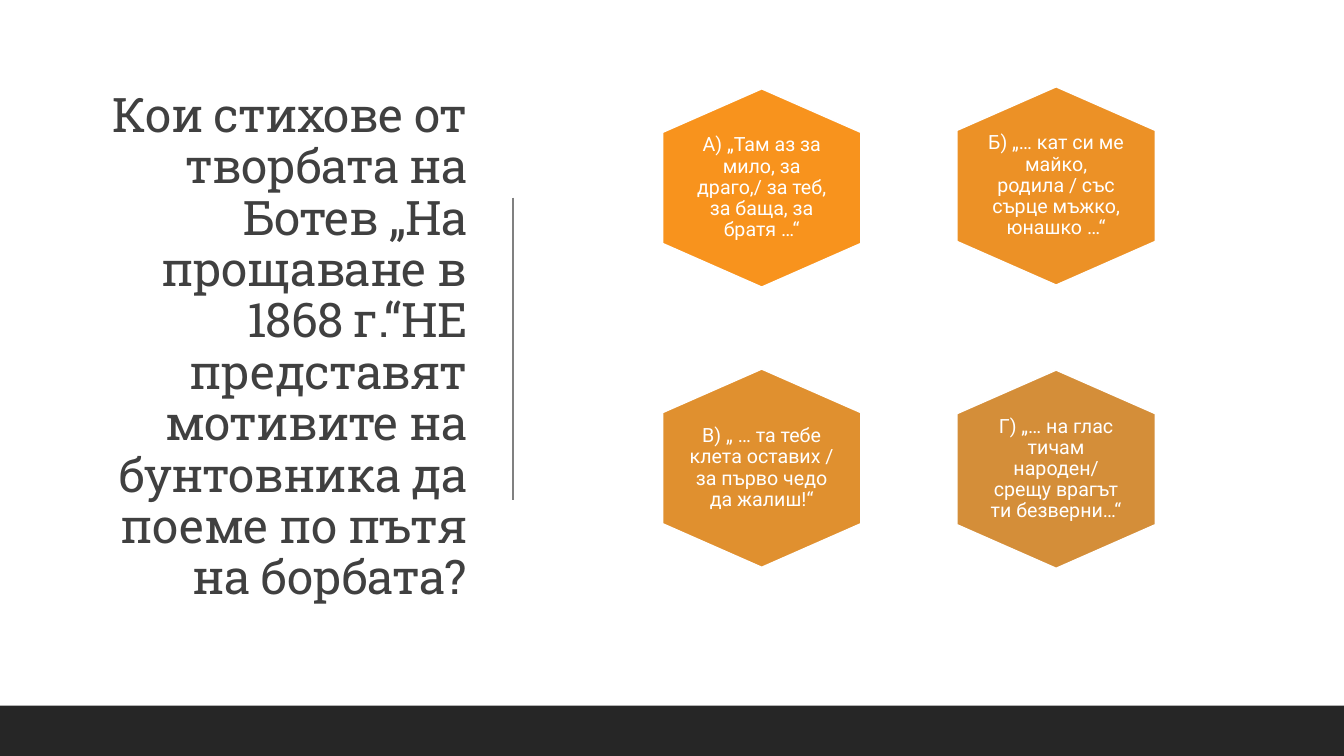
"""Build a quiz slide with a question and four hexagonal answers."""
from dataclasses import dataclass

from pptx import Presentation
from pptx.dml.color import RGBColor
from pptx.enum.shapes import MSO_CONNECTOR, MSO_SHAPE
from pptx.enum.text import MSO_ANCHOR, PP_ALIGN
from pptx.oxml.ns import qn
from pptx.shapes.autoshape import Shape
from pptx.slide import Slide
from pptx.util import Inches, Pt
from lxml import etree

STRAIGHT = MSO_CONNECTOR.STRAIGHT
RECTANGLE = MSO_SHAPE.RECTANGLE
MIDDLE = MSO_ANCHOR.MIDDLE
CENTER, RIGHT = PP_ALIGN.CENTER, PP_ALIGN.RIGHT

WHITE = RGBColor(0xFF, 0xFF, 0xFF)
DARK = RGBColor(0x26, 0x26, 0x26)
TEXT = RGBColor(0x40, 0x40, 0x40)
GREY = RGBColor(0x80, 0x80, 0x80)

QUESTION = ("Кои стихове от творбата на Ботев „На прощаване в 1868 г.“НЕ "
            "представят мотивите на бунтовника да поеме по пътя на борбата?")
HEX_SIZE = 1.97
HEX_POINTS = ((0.5, 0), (1, 0.22), (1, 0.78), (0.5, 1), (0, 0.78), (0, 0.22))
LEFT_COLUMN, RIGHT_COLUMN = 6.57, 9.49


@dataclass(frozen=True)
class Answer:
    left: float
    top: float
    fill: RGBColor
    text: str


ANSWERS = (
    Answer(LEFT_COLUMN, 0.88, RGBColor(0xF8, 0x93, 0x1D),
           "А) „Там аз за мило, за драго,/ за теб, за баща, за братя …“"),
    Answer(RIGHT_COLUMN, 0.86, RGBColor(0xEC, 0x91, 0x26),
           "Б) „… кат си ме майко, родила / със сърце мъжко, юнашко …“"),
    Answer(LEFT_COLUMN, 3.66, RGBColor(0xE0, 0x90, 0x2F),
           "В) „ … та тебе клета оставих / за първо чедо да жалиш!“"),
    Answer(RIGHT_COLUMN, 3.67, RGBColor(0xD4, 0x8E, 0x39),
           "Г) „… на глас тичам народен/ срещу врагът ти безверни…“"),
)


def write(sp: Shape, text: str, font: str, size: float, color: RGBColor,
          align: PP_ALIGN, spacing: int = 0) -> None:
    tf = sp.text_frame
    tf.word_wrap = True
    tf.vertical_anchor = MIDDLE
    p = tf.paragraphs[0]
    p.alignment = align
    p.line_spacing = 0.9
    r = p.add_run()
    r.text = text
    r.font.name = font
    r.font.size = Pt(size)
    r.font.color.rgb = color
    if spacing:
        r.font._element.set("spc", str(spacing))


def add_question(s: Slide) -> None:
    sp = s.shapes.add_textbox(Inches(0.7), Inches(0.69), Inches(4.03), Inches(5.53))
    write(sp, QUESTION, "Roboto Slab", 34, TEXT, RIGHT, spacing=-50)


def add_divider(s: Slide) -> None:
    line = s.shapes.add_connector(STRAIGHT, Inches(5.09), Inches(1.96),
                                  Inches(5.09), Inches(4.96))
    line.line.color.rgb = GREY
    line.line.width = Pt(1)
    etree.SubElement(line._element.spPr, qn("a:effectLst"))


def add_footer(s: Slide) -> None:
    sp = s.shapes.add_shape(RECTANGLE, 0, Inches(7), Inches(13.33), Inches(0.5))
    sp.shadow.inherit = False
    sp.fill.solid()
    sp.fill.fore_color.rgb = DARK
    sp.line.fill.background()


def add_answer(s: Slide, answer: Answer) -> None:
    points = [(Inches(answer.left + x * HEX_SIZE), Inches(answer.top + y * HEX_SIZE))
              for x, y in HEX_POINTS]
    builder = s.shapes.build_freeform(*points[0])
    builder.add_line_segments(points[1:], close=True)
    sp = builder.convert_to_shape()
    sp.shadow.inherit = False
    sp.fill.solid()
    sp.fill.fore_color.rgb = answer.fill
    sp.line.color.rgb = WHITE
    sp.line.width = Pt(1.25)
    tf = sp.text_frame
    tf.margin_left = tf.margin_right = Inches(0.26)
    tf.margin_top = tf.margin_bottom = Inches(0.29)
    write(sp, answer.text, "Roboto", 14, WHITE, CENTER)


def main() -> None:
    prs = Presentation()
    prs.slide_width, prs.slide_height = Inches(13.33), Inches(7.5)
    s = prs.slides.add_slide(prs.slide_layouts[6])
    s.background.fill.solid()
    s.background.fill.fore_color.rgb = WHITE
    add_question(s)
    add_divider(s)
    add_footer(s)
    for answer in ANSWERS:
        add_answer(s, answer)
    prs.save("out.pptx")


if __name__ == "__main__":
    main()
